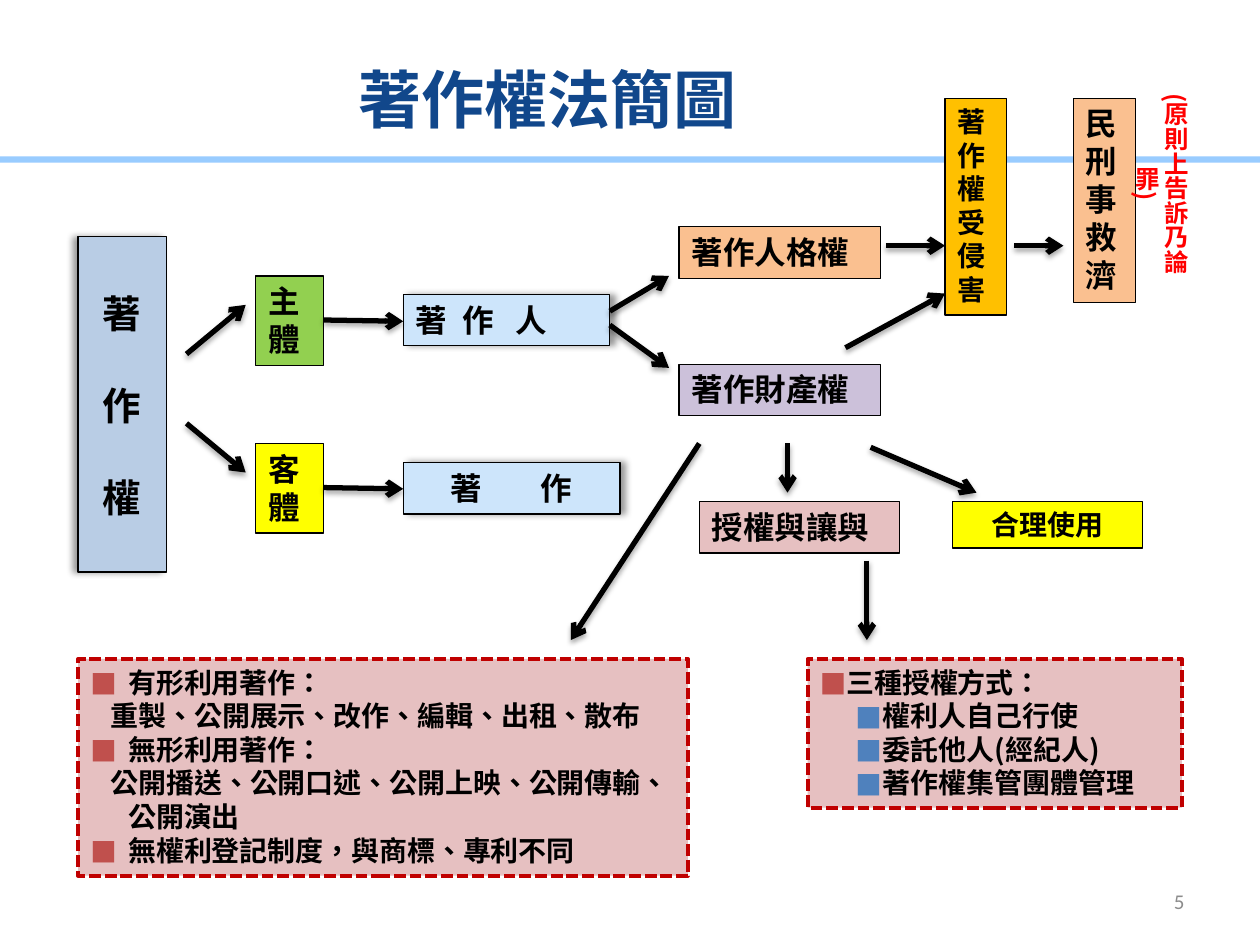
from lxml import etree
from pptx import Presentation
from pptx.dml.color import RGBColor
from pptx.enum.dml import MSO_LINE
from pptx.enum.shapes import MSO_CONNECTOR, MSO_SHAPE
from pptx.enum.text import MSO_ANCHOR, PP_ALIGN
from pptx.oxml.ns import qn
from pptx.util import Inches, Pt

RECTANGLE, STRAIGHT = MSO_SHAPE.RECTANGLE, MSO_CONNECTOR.STRAIGHT
LEFT, CENTER, RIGHT = PP_ALIGN.LEFT, PP_ALIGN.CENTER, PP_ALIGN.RIGHT
TOP, MIDDLE = MSO_ANCHOR.TOP, MSO_ANCHOR.MIDDLE
DASH = MSO_LINE.SQUARE_DOT

BLACK = RGBColor(0x00, 0x00, 0x00)
GRAY = RGBColor(0x8C, 0x8C, 0x8C)
NAVY = RGBColor(0x11, 0x47, 0x8B)
RED = RGBColor(0xFF, 0x00, 0x00)
DARK_RED = RGBColor(0xC0, 0x00, 0x00)
BRICK = RGBColor(0xC0, 0x50, 0x4D)
BLUE = RGBColor(0x4F, 0x81, 0xBD)
SKY = RGBColor(0x99, 0xCC, 0xFF)
STEEL = RGBColor(0xB9, 0xCD, 0xE5)
PALE_BLUE = RGBColor(0xCD, 0xE5, 0xFB)
GREEN = RGBColor(0x92, 0xD0, 0x50)
YELLOW = RGBColor(0xFF, 0xFF, 0x00)
AMBER = RGBColor(0xFF, 0xC0, 0x00)
PEACH = RGBColor(0xFA, 0xC0, 0x90)
LILAC = RGBColor(0xCC, 0xC1, 0xDA)
PINK = RGBColor(0xE6, 0xC0, 0xC1)

CJK_FONT, LATIN_FONT = "Noto Sans CJK SC", "Calibri"
UNIT = Inches(0.1)
LINE_FACTOR = 1.2
ARROW_SHADOW = (35, 3.1, 1.8, 90)
LEFT_SHADOW = (40, 4, 3, 180)
RIGHT_SHADOW = (40, 4, 3, 0)

BOXES = [
    ("主體", (20.3, 21.9, 5.4, 7.1), GREEN, 18, LEFT),
    ("客體", (20.3, 35.2, 5.4, 7.1), YELLOW, 18, LEFT),
    ("著作人格權", (53.9, 18, 16, 4.1), PEACH, 18, LEFT),
    ("著作財產權", (53.9, 28.9, 16, 4.1), LILAC, 18, LEFT),
    ("授權與讓與", (55.5, 39.8, 15.9, 4.1), PINK, 18, LEFT),
    ("合理使用", (75.6, 39.8, 15.1, 3.7), YELLOW, 16, CENTER),
    ("著作權受侵害", (75, 7.8, 4.9, 17.2), AMBER, 16, LEFT),
    ("民刑事救濟", (85.2, 7.8, 4.9, 16.2), PEACH, 18, LEFT),
]

SPACED_BOXES = [
    ("著\t作\t人", (32, 23.4, 16.4, 4), (3.7, 7.9)),
    ("\t著\t作", (32, 36.7, 17.2, 4.1), (2.8, 9.9)),
]

ARROWS = [
    ((14.8, 33.6), (19.5, 37.5)),
    ((14.8, 28.1), (19.5, 24.2)),
    ((25.7, 38.7), (32, 38.8)),
    ((25.7, 25.4), (32, 25.5)),
    ((48.4, 24.7), (53.1, 21.9)),
    ((48.4, 25.8), (53.1, 29.2)),
    ((62.5, 35.2), (62.5, 39.1)),
    ((67.1, 27.6), (75, 23.3)),
    ((70.3, 19.5), (75, 19.5)),
    ((80.5, 19.5), (84.4, 19.5)),
    ((55.5, 35.2), (45.3, 50.8)),
    ((68.8, 44.5), (68.8, 50.8)),
    ((69.1, 35.5), (77.5, 39.1)),
]

ITEM, DETAIL = (1, 3, -3, BRICK), (1, 3, -1.4, None)
HEADING, OPTION = (0, 0, 0, BRICK), (1, 5, -2.2, BLUE)
USES = [
    ("有形利用著作：", ITEM),
    ("重製、公開展示、改作、編輯、出租、散布", DETAIL),
    ("無形利用著作：", ITEM),
    ("公開播送、公開口述、公開上映、公開傳輸、公開演出", DETAIL),
    ("無權利登記制度，與商標、專利不同", ITEM),
]
LICENSES = [
    ("三種授權方式：", HEADING),
    ("權利人自己行使", OPTION),
    ("委託他人(經紀人)", OPTION),
    ("著作權集管團體管理", OPTION),
]


def grid(*lengths):
    return [round(length * UNIT) for length in lengths]


def add_element(parent, tag, **attributes):
    element = etree.SubElement(parent, qn(tag))
    for name, value in attributes.items():
        element.set(name, str(value))
    return element


def set_shadow(shape, shadow):
    opacity, blur, distance, angle = shadow
    effects = add_element(shape._element.spPr, "a:effectLst")
    outer = add_element(effects, "a:outerShdw", blurRad=Pt(blur), dist=Pt(distance),
                        dir=angle * 60000, algn="ctr", rotWithShape=0)
    color = add_element(outer, "a:srgbClr", val=BLACK)
    add_element(color, "a:alpha", val=opacity * 1000)


def add_text(paragraph, text, size, color=BLACK, align=LEFT, font=CJK_FONT, bold=True):
    paragraph.alignment = align
    paragraph.line_spacing = Pt(size * LINE_FACTOR)
    run = paragraph.add_run()
    run.text = text
    run.font.size, run.font.bold, run.font.name = Pt(size), bold, font
    run.font.color.rgb = color
    properties = run._r.get_or_add_rPr()
    properties.set("lang", "zh-TW")
    add_element(properties, "a:ea", typeface=font)


def add_paragraphs(frame, count):
    return [frame.paragraphs[0]] + [frame.add_paragraph() for _ in range(count - 1)]


def add_box(slide, place, fill, line=BLACK, width=0.75, dash=None, shadow=None):
    shape = slide.shapes.add_shape(RECTANGLE, *grid(*place))
    shape.fill.solid()
    shape.fill.fore_color.rgb = fill
    if line is None:
        shape.line.fill.background()
    else:
        shape.line.color.rgb = line
        shape.line.width = Pt(width)
        shape.line.dash_style = dash
    if shadow:
        set_shadow(shape, shadow)
    else:
        shape.shadow.inherit = False
    frame = shape.text_frame
    frame.word_wrap, frame.vertical_anchor = True, TOP
    return frame


def add_label(slide, place, anchor=TOP):
    frame = slide.shapes.add_textbox(*grid(*place)).text_frame
    frame.word_wrap, frame.vertical_anchor = True, anchor
    return frame


def add_spaced_box(slide, text, place, stops):
    paragraph = add_box(slide, place, PALE_BLUE, shadow=RIGHT_SHADOW).paragraphs[0]
    tabs = add_element(paragraph._p.get_or_add_pPr(), "a:tabLst")
    for stop in grid(*stops):
        add_element(tabs, "a:tab", pos=stop, algn="l")
    add_text(paragraph, text, 18)


def add_root_box(slide):
    frame = add_box(slide, (6.2, 18.8, 7, 26.6), STEEL, shadow=LEFT_SHADOW)
    frame.margin_top = Inches(0.42)
    for index, paragraph in enumerate(add_paragraphs(frame, 3)):
        add_text(paragraph, "著作權"[index], 22, align=CENTER)
        if index:
            paragraph.space_before = Pt(22 * LINE_FACTOR)


def add_list_box(slide, place, items):
    frame = add_box(slide, place, PINK, DARK_RED, 2.25, DASH)
    for paragraph, (text, style) in zip(add_paragraphs(frame, len(items)), items):
        level, margin, indent, bullet = style
        paragraph.level = level
        properties = paragraph._p.get_or_add_pPr()
        for name, length in zip(("marL", "indent"), grid(margin, indent)):
            properties.set(name, str(length))
        if bullet:
            add_element(add_element(properties, "a:buClr"), "a:srgbClr", val=bullet)
            add_element(properties, "a:buFont", typeface=LATIN_FONT)
            add_element(properties, "a:buChar", char="■")
        add_text(paragraph, text, 16)


def add_arrow(slide, start, end):
    connector = slide.shapes.add_connector(STRAIGHT, *grid(*start, *end))
    connector.line.color.rgb = BLACK
    connector.line.width = Pt(3)
    add_element(connector._element.spPr.find(qn("a:ln")), "a:tailEnd", type="arrow")
    set_shadow(connector, ARROW_SHADOW)


def add_side_note(slide):
    frame = add_label(slide, (90.6, 6.4, 4.4, 16.5))
    frame.margin_left = frame.margin_right = Inches(0.05)
    frame._txBody.bodyPr.set("vert", "eaVert")
    add_text(frame.paragraphs[0], "(原則上告訴乃論罪)", 14, RED, CENTER)


def main():
    presentation = Presentation()
    presentation.slide_width, presentation.slide_height = grid(100, 75)
    slide = presentation.slides.add_slide(presentation.slide_layouts[6])
    add_box(slide, (-0.4, 12.4, 100.6, 0.5), SKY, line=None)
    number = add_label(slide, (71.7, 69.5, 23.3, 4), MIDDLE)
    add_text(number.paragraphs[0], "5", 12, GRAY, RIGHT, LATIN_FONT, False)
    add_root_box(slide)
    for text, place, fill, size, align in BOXES:
        add_text(add_box(slide, place, fill).paragraphs[0], text, size, align=align)
    for text, place, stops in SPACED_BOXES:
        add_spaced_box(slide, text, place, stops)
    add_list_box(slide, (6.2, 52.3, 48.4, 17.2), USES)
    add_list_box(slide, (64.1, 52.3, 29.7, 11.8), LICENSES)
    for start, end in ARROWS:
        add_arrow(slide, start, end)
    title = add_label(slide, (27.5, 4.3, 40.6, 7))
    add_text(title.paragraphs[0], "著作權法簡圖", 36, NAVY)
    add_side_note(slide)
    presentation.save("out.pptx")


if __name__ == "__main__":
    main()
